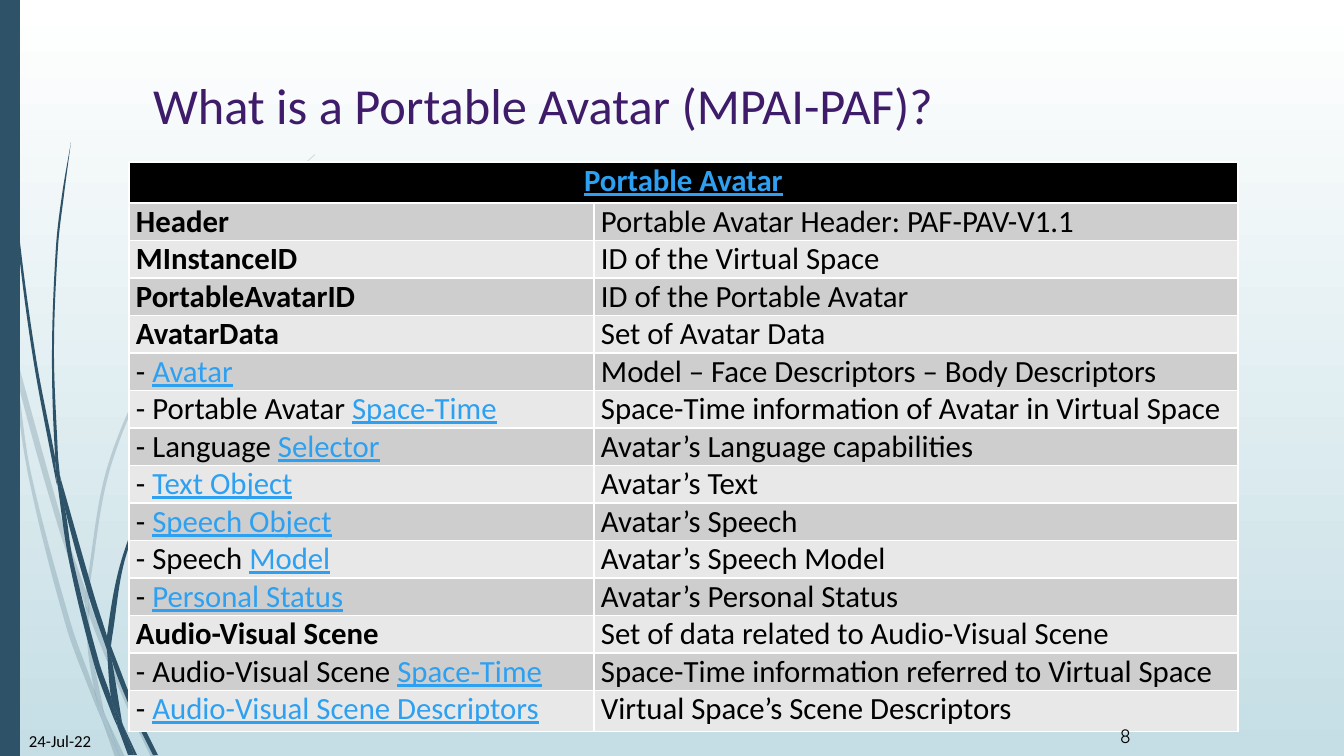
from dataclasses import dataclass
from math import dist

from lxml.etree import SubElement
from pptx import Presentation
from pptx.dml.color import RGBColor
from pptx.enum.shapes import MSO_SHAPE
from pptx.enum.text import MSO_ANCHOR, MSO_AUTO_SIZE, PP_ALIGN
from pptx.oxml.ns import qn
from pptx.util import Emu, Pt

COLORS = {
    "text": "000000", "title": "3F1C6A", "link": "2DA0F1", "teal": "2E5369",
    "sky": "FFFFFF", "ground": "C5DEE5",
    "header": "000000", "odd": "CECECE", "even": "E8E8E8",
}
PX = 12192000 / 1344
Point = tuple[int, int]


@dataclass(frozen=True)
class Blade:
    """One piece of grass: the edge going out and the edge coming back."""
    out: list[Point]
    back: list[Point]


@dataclass(frozen=True)
class Field:
    name: str
    meaning: str
    link: str = ""


PALE_GRASS = [
    Blade([(11, 353), (9, 325), (0, 284)], [(0, 301), (10, 347), (11, 353)]),
    Blade([(14, 348), (17, 379), (58, 526), (85, 604)], [(86, 591), (63, 524), (14, 348)]),
    Blade([(89, 601), (89, 615), (124, 700), (151, 757)],
          [(156, 757), (128, 698), (93, 612), (89, 601)]),
    Blade([(106, 717), (120, 757)], [(125, 757), (106, 717)]),
    Blade([(11, 353), (28, 474), (66, 626), (93, 699), (102, 720)],
          [(100, 713), (94, 689), (71, 624), (31, 473), (17, 379), (11, 353)]),
    Blade([(85, 604), (88, 651), (94, 689), (97, 698), (106, 717)],
          [(104, 712), (92, 651), (89, 615), (89, 613), (85, 604)]),
    Blade([(315, 154), (291, 176), (270, 199), (230, 246), (159, 351), (108, 465),
           (86, 589), (86, 591), (89, 601)],
          [(89, 589), (111, 466), (161, 352), (231, 247), (270, 200), (292, 176), (315, 155)]),
    Blade([(102, 720), (115, 757)], [(120, 757), (102, 720)]),
    Blade([(86, 591), (85, 604), (89, 613)], [(89, 615), (89, 601), (86, 591)]),
    Blade([(94, 689), (100, 713), (102, 720), (120, 757)],
          [(120, 757), (106, 717), (97, 698), (94, 689)]),
]
DARK_GRASS = [
    Blade([(3, 0), (4, 48), (7, 111), (17, 235), (33, 358), (56, 481), (57, 485)],
          [(55, 461), (55, 457), (36, 358), (19, 234), (8, 110), (5, 48), (4, 0)]),
    Blade([(60, 476), (65, 509), (89, 597), (107, 650)],
          [(107, 638), (107, 636), (94, 595), (60, 476)]),
    Blade([(111, 646), (112, 661), (133, 714), (153, 755)],
          [(158, 755), (137, 712), (114, 654), (111, 646)]),
    Blade([(57, 481), (69, 561), (94, 664), (112, 714), (118, 728)],
          [(117, 723), (111, 697), (99, 662), (73, 560), (65, 509), (57, 481)]),
    Blade([(71, 142), (62, 195), (56, 247), (52, 352), (55, 453), (60, 476)],
          [(58, 457), (54, 352), (58, 247), (64, 195), (71, 142)]),
    Blade([(123, 725), (134, 755)], [(137, 755), (123, 725)]),
    Blade([(55, 453), (55, 457), (57, 481), (65, 509)], [(60, 476), (55, 453)]),
    Blade([(262, 347), (247, 361), (233, 376), (206, 408), (157, 478), (123, 555),
           (107, 636), (111, 646)],
          [(112, 638), (126, 556), (159, 480), (207, 409), (233, 377), (247, 362), (263, 347)]),
    Blade([(118, 728), (128, 755)], [(132, 755), (118, 728)]),
    Blade([(107, 650), (111, 697), (117, 712), (123, 725)],
          [(122, 722), (112, 661), (110, 656), (107, 650)]),
    Blade([(107, 636), (107, 650), (110, 656), (112, 661)], [(111, 646), (107, 636)]),
    Blade([(111, 697), (117, 723), (118, 728), (131, 755)],
          [(134, 755), (123, 725), (117, 712), (111, 697)]),
]
FIELDS = [
    Field("Header", "Portable Avatar Header: PAF-PAV-V1.1"),
    Field("MInstanceID", "ID of the Virtual Space"),
    Field("PortableAvatarID", "ID of the Portable Avatar"),
    Field("AvatarData", "Set of Avatar Data"),
    Field("- ", "Model – Face Descriptors – Body Descriptors", "Avatar"),
    Field("- Portable Avatar ", "Space-Time information of Avatar in Virtual Space", "Space-Time"),
    Field("- Language ", "Avatar’s Language capabilities", "Selector"),
    Field("- ", "Avatar’s Text", "Text Object"),
    Field("- ", "Avatar’s Speech", "Speech Object"),
    Field("- Speech ", "Avatar’s Speech Model", "Model"),
    Field("- ", "Avatar’s Personal Status", "Personal Status"),
    Field("Audio-Visual Scene", "Set of data related to Audio-Visual Scene"),
    Field("- Audio-Visual Scene ", "Space-Time information referred to Virtual Space", "Space-Time"),
    Field("- ", "Virtual Space’s Scene Descriptors", "Audio-Visual Scene Descriptors"),
]


def px(length: int) -> Emu:
    return Emu(round(length * PX))


def rgb(role: str) -> RGBColor:
    return RGBColor.from_string(COLORS[role])


def format_run(run, size: int, color: str = "text", face: str = "Calibri",
               bold: bool = False, underline: bool = False) -> None:
    font = run.font
    font.size, font.name, font.bold, font.underline = Pt(size), face, bold, underline
    font.color.rgb = rgb(color)


def paint(shape, alpha: int = 100) -> None:
    """Fill a decoration in teal, without outline or shadow."""
    shape.shadow.inherit = False
    shape.fill.solid()
    shape.fill.fore_color.rgb = rgb("teal")
    shape.line.fill.background()
    if alpha < 100:
        color = shape.fill._xPr.find(qn("a:solidFill"))[0]
        SubElement(color, qn("a:alpha"), val=str(alpha * 1000))


def handle(anchor, before, after, reach: float) -> tuple[int, int]:
    """Control point beside an anchor, along the line from before to after."""
    scale = reach / 3 / (dist(before, after) or 1)
    return tuple(round(a + (q - p) * scale) for a, p, q in zip(anchor, before, after))


def bend(shape, tip: int) -> None:
    """Turn the straight sides of a blade into curves, with a corner at its tip."""
    path = next(shape._element.iter(qn("a:path")))
    points = [(int(pt.get("x")), int(pt.get("y"))) for pt in path.iter(qn("a:pt"))]
    for i, side in enumerate(path.findall(qn("a:lnTo"))):
        if i == tip:
            continue
        first, last = (0, tip) if i < tip else (tip + 1, len(points) - 1)
        start, end = points[i], points[i + 1]
        reach = dist(start, end)
        leave = handle(start, points[max(i - 1, first)], end, reach)
        arrive = handle(end, points[min(i + 2, last)], start, reach)
        side.tag = qn("a:cubicBezTo")
        for order, (x, y) in enumerate((leave, arrive)):
            control = SubElement(side, qn("a:pt"), x=str(x), y=str(y))
            side.insert(order, control)


def draw_grass(slide, blades: list[Blade], alpha: int) -> None:
    clump = slide.shapes.add_group_shape()
    for blade in blades:
        outline = [(px(x), px(y)) for x, y in blade.out + blade.back]
        builder = clump.shapes.build_freeform(*outline[0])
        builder.add_line_segments(outline[1:])
        piece = builder.convert_to_shape()
        bend(piece, len(blade.out) - 1)
        paint(piece, alpha)


def draw_footer(slide, text: str, box: tuple[int, int, int, int], size: int, face: str) -> None:
    frame = slide.shapes.add_textbox(*map(px, box)).text_frame
    frame.word_wrap = True
    frame.text = text
    format_run(frame.paragraphs[0].runs[0], size, face=face)


def style_cell(cell, fill: str) -> None:
    cell.margin_left = cell.margin_right = px(7)
    cell.margin_top = cell.margin_bottom = 0
    cell.fill.solid()
    cell.fill.fore_color.rgb = rgb(fill)


def draw_table(slide) -> None:
    heights = [41] + [37] * (len(FIELDS) - 1) + [41]
    table = slide.shapes.add_table(len(heights), 2, px(129), px(162),
                                   px(1109), px(sum(heights))).table
    table.columns[0].width, table.columns[1].width = px(465), px(644)
    for row, height in zip(table.rows, heights):
        row.height = px(height)
    heading = table.cell(0, 0)
    heading.merge(table.cell(0, 1))
    style_cell(heading, "header")
    heading.text_frame.text = "Portable Avatar"
    heading_line = heading.text_frame.paragraphs[0]
    heading_line.alignment = PP_ALIGN.CENTER
    format_run(heading_line.runs[0], 22, "link", bold=True, underline=True)
    for index, field in enumerate(FIELDS, start=1):
        name, meaning = table.rows[index].cells
        for cell, text in ((name, field.name), (meaning, field.meaning)):
            style_cell(cell, "odd" if index % 2 else "even")
            cell.text_frame.text = text
            format_run(cell.text_frame.paragraphs[0].runs[0], 22,
                       bold=cell is name and not field.link)
        if field.link:
            link = name.text_frame.paragraphs[0].add_run()
            link.text = field.link
            format_run(link, 22, "link", underline=True)


def main() -> None:
    deck = Presentation()
    deck.slide_width, deck.slide_height = px(1344), px(756)
    slide = deck.slides.add_slide(deck.slide_layouts[5])
    sky = slide.background.fill
    sky.gradient()
    sky.gradient_angle = 270
    for stop, role, position in zip(sky.gradient_stops, ("sky", "ground"), (0, 1)):
        stop.color.rgb, stop.position = rgb(role), position
    draw_grass(slide, PALE_GRASS, 20)
    draw_grass(slide, DARK_GRASS, 100)
    paint(slide.shapes.add_shape(MSO_SHAPE.RECTANGLE, 0, 0, px(20), px(756)))

    title = slide.shapes.title
    title.left, title.top, title.width, title.height = map(px, (143, 69, 1125, 141))
    title.text_frame.text = "What is a Portable Avatar (MPAI-PAF)?"
    title.text_frame.vertical_anchor = MSO_ANCHOR.TOP
    title.text_frame.auto_size = MSO_AUTO_SIZE.NONE
    title.text_frame.paragraphs[0].alignment = PP_ALIGN.LEFT
    format_run(title.text_frame.paragraphs[0].runs[0], 36, "title")

    draw_table(slide)
    draw_footer(slide, "24-Jul-22", (19, 726, 110, 40), 12, "Calibri")
    draw_footer(slide, "8", (1110, 724, 61, 5), 14, "Quicksand")
    deck.save("out.pptx")


if __name__ == "__main__":
    main()
